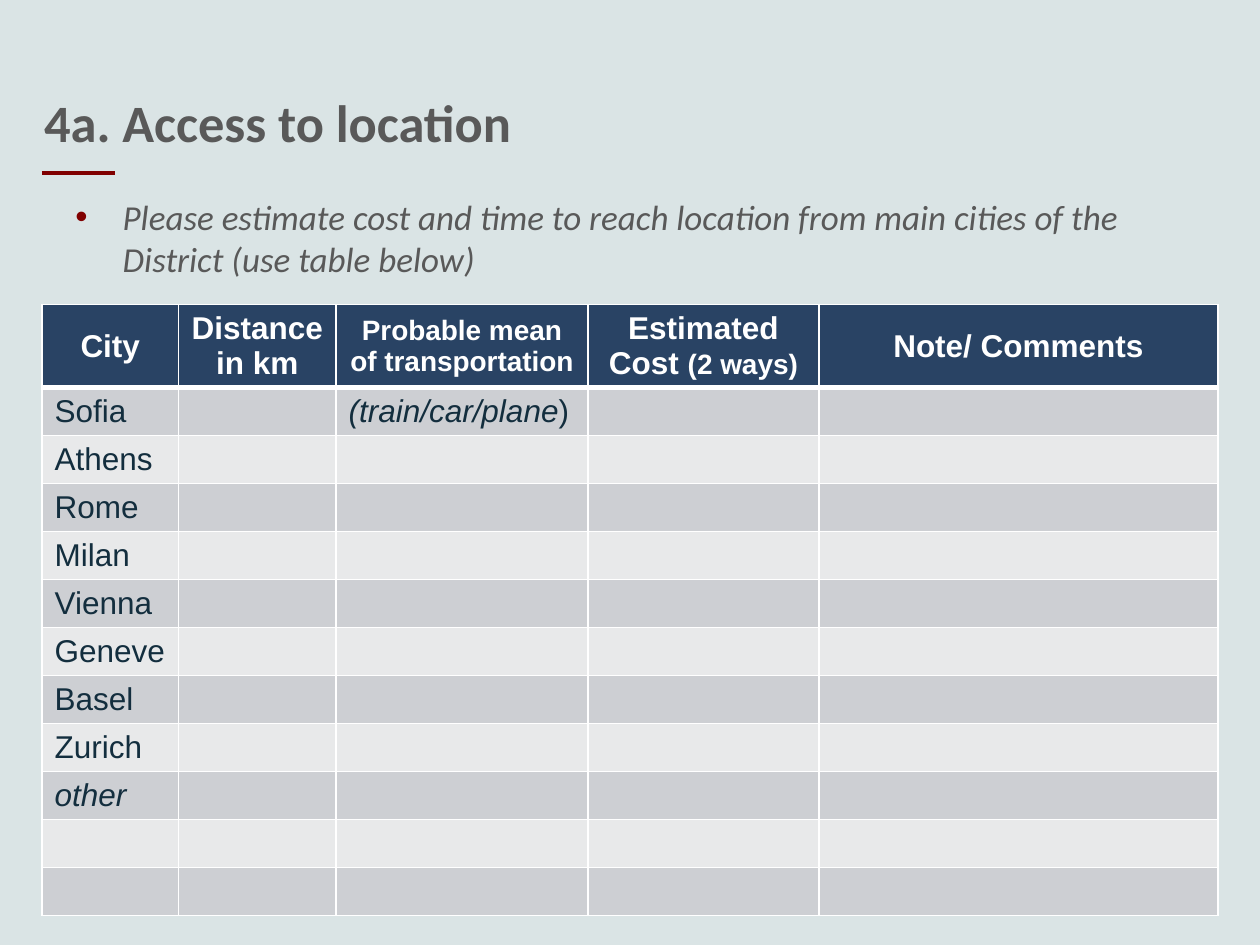
"""Build the access-to-location slide with its city travel table."""
from dataclasses import dataclass
from typing import Any, NamedTuple

import lxml.etree
import pptx
import pptx.dml.color
import pptx.enum.shapes
import pptx.enum.text
import pptx.oxml.ns
import pptx.util

ALIGN = pptx.enum.text.PP_ALIGN
ANCHOR = pptx.enum.text.MSO_ANCHOR


@dataclass(frozen=True)
class Theme:
    backdrop: str = "DAE4E5"
    accent: str = "800000"
    text: str = "595959"
    header: str = "294364"
    border: str = "FFFFFF"
    city: str = "132E3E"
    bands: tuple[str, str] = ("CDCFD3", "E8E9EA")
    heading_font: str = "Calibri"
    table_font: str = "Arial"
    title_size: int = 30
    prompt_size: int = 20
    table_size: int = 18
    small_size: int = 16
    rule_width: float = 2.25
    border_width: int = 1
    header_border_width: int = 3


class Area(NamedTuple):
    column: float
    row: float
    columns: float
    rows: float


class Words(NamedTuple):
    text: str
    size: int
    italic: bool = False


THEME = Theme()
UNITS_PER_INCH = 12
TITLE_AREA = Area(3, 8, 108, 12)
PROMPT_AREA = Area(6, 18, 112, 67)
RULE_AREA = Area(4, 16.45, 7, 0)
COLUMN_UNITS = (13, 15, 24, 22, 38)
HEADER_UNITS, CITY_UNITS = 7.8, 4.57
BULLET_INDENT = 4.5

HEADERS = (
    (Words("City", THEME.table_size),),
    (Words("Distance in km", THEME.table_size),),
    (Words("Probable mean of transportation", THEME.small_size),),
    (Words("Estimated Cost ", THEME.table_size), Words("(2 ways)", THEME.small_size)),
    (Words("Note/ Comments", THEME.table_size),),
)
CITIES = ("Sofia", "Athens", "Rome", "Milan", "Vienna", "Geneve", "Basel", "Zurich", "other", "", "")
TRANSPORT_HINT = (Words("(train/car/plane", THEME.table_size, True), Words(")", THEME.table_size))


def grid(units: float) -> int:
    return pptx.util.Inches(units / UNITS_PER_INCH)


def rgb(color: str) -> pptx.dml.color.RGBColor:
    return pptx.dml.color.RGBColor.from_string(color)


def apply(target: Any, values: dict[str, Any]) -> None:
    for name, value in values.items():
        setattr(target, name, value)


def write(paragraph: Any, words: Words, font: str, color: str, bold: bool = False) -> None:
    run = paragraph.add_run()
    run.text = words.text
    apply(run.font, {"name": font, "size": pptx.util.Pt(words.size), "bold": bold, "italic": words.italic})
    run.font.color.rgb = rgb(color)


def place(shape: Any, area: Area) -> None:
    apply(shape, dict(zip(("left", "top", "width", "height"), map(grid, area))))
    apply(shape.text_frame, {
        "word_wrap": True,
        "vertical_anchor": ANCHOR.TOP,
        "auto_size": pptx.enum.text.MSO_AUTO_SIZE.NONE,
    })


def add_node(parent: Any, tag: str, **attributes: str) -> Any:
    return lxml.etree.SubElement(parent, pptx.oxml.ns.qn(tag), attributes)


def draw_rule(slide: Any) -> None:
    left, top, width, _ = map(grid, RULE_AREA)
    rule = slide.shapes.add_connector(
        pptx.enum.shapes.MSO_CONNECTOR.STRAIGHT, left, top, left + width, top)
    rule.line.color.rgb = rgb(THEME.accent)
    rule.line.width = pptx.util.Pt(THEME.rule_width)
    add_node(rule._element.spPr, "a:effectLst")


def draw_title(slide: Any) -> None:
    title = slide.shapes.title
    place(title, TITLE_AREA)
    heading = title.text_frame.paragraphs[0]
    heading.alignment = ALIGN.LEFT
    write(heading, Words("4a. Access to location", THEME.title_size),
          THEME.heading_font, THEME.text, bold=True)


def draw_prompt(slide: Any) -> None:
    prompt = slide.shapes.add_textbox(*map(grid, PROMPT_AREA))
    place(prompt, PROMPT_AREA)
    request = prompt.text_frame.paragraphs[0]
    properties = request._p.get_or_add_pPr()
    properties.set("marL", str(grid(BULLET_INDENT)))
    properties.set("indent", str(-grid(BULLET_INDENT)))
    add_node(add_node(properties, "a:buClr"), "a:srgbClr", val=THEME.accent)
    add_node(properties, "a:buFont", typeface="Arial")
    add_node(properties, "a:buChar", char="•")
    write(request, Words("Please estimate cost and time to reach location from main cities "
                         "of the District (use table below)", THEME.prompt_size, True),
          THEME.heading_font, THEME.text)


def format_cell(cell: Any, fill: str, top: float, bottom: float) -> None:
    properties = cell._tc.get_or_add_tcPr()
    side = THEME.border_width
    for tag, width in (("a:lnL", side), ("a:lnR", side), ("a:lnT", top), ("a:lnB", bottom)):
        edge = add_node(properties, tag, w=str(pptx.util.Pt(width)))
        add_node(add_node(edge, "a:solidFill"), "a:srgbClr", val=THEME.border)
    cell.fill.solid()
    cell.fill.fore_color.rgb = rgb(fill)


def fill_cell(cell: Any, phrases: tuple[Words, ...], color: str, bold: bool = False) -> None:
    paragraph = cell.text_frame.paragraphs[0]
    for words in phrases:
        write(paragraph, words, THEME.table_font, color, bold)
    if not phrases:
        blank = add_node(paragraph._p, "a:endParaRPr", sz=str(THEME.small_size * 100))
        add_node(blank, "a:latin", typeface=THEME.table_font)


def city_phrases(row: int, column: int) -> tuple[Words, ...]:
    city = CITIES[row - 1]
    if column == 0 and city:
        return (Words(city, THEME.table_size, city == "other"),)
    return TRANSPORT_HINT if (row, column) == (1, 2) else ()


def draw_table(slide: Any) -> None:
    row_units = (HEADER_UNITS,) + (CITY_UNITS,) * len(CITIES)
    area = Area(4, 29, sum(COLUMN_UNITS), sum(row_units))
    table = slide.shapes.add_table(len(row_units), len(COLUMN_UNITS), *map(grid, area)).table
    for column, units in zip(table.columns, COLUMN_UNITS):
        column.width = grid(units)
    for row, units in zip(table.rows, row_units):
        row.height = grid(units)

    thin, thick = THEME.border_width, THEME.header_border_width
    for column, heading in enumerate(HEADERS):
        cell = table.cell(0, column)
        format_cell(cell, THEME.header, thin, thick)
        cell.vertical_anchor = ANCHOR.MIDDLE
        cell.text_frame.paragraphs[0].alignment = ALIGN.CENTER
        fill_cell(cell, heading, THEME.border, bold=True)

    for row in range(1, len(row_units)):
        for column in range(len(COLUMN_UNITS)):
            cell = table.cell(row, column)
            format_cell(cell, THEME.bands[(row - 1) % 2], thick if row == 1 else thin, thin)
            fill_cell(cell, city_phrases(row, column), THEME.city)


def main() -> None:
    deck = pptx.Presentation()
    apply(deck, {"slide_width": pptx.util.Inches(10), "slide_height": pptx.util.Inches(7.5)})
    slide = deck.slides.add_slide(deck.slide_layouts[5])
    slide.background.fill.solid()
    slide.background.fill.fore_color.rgb = rgb(THEME.backdrop)
    for draw in (draw_rule, draw_title, draw_prompt, draw_table):
        draw(slide)
    deck.save("out.pptx")


if __name__ == "__main__":
    main()
